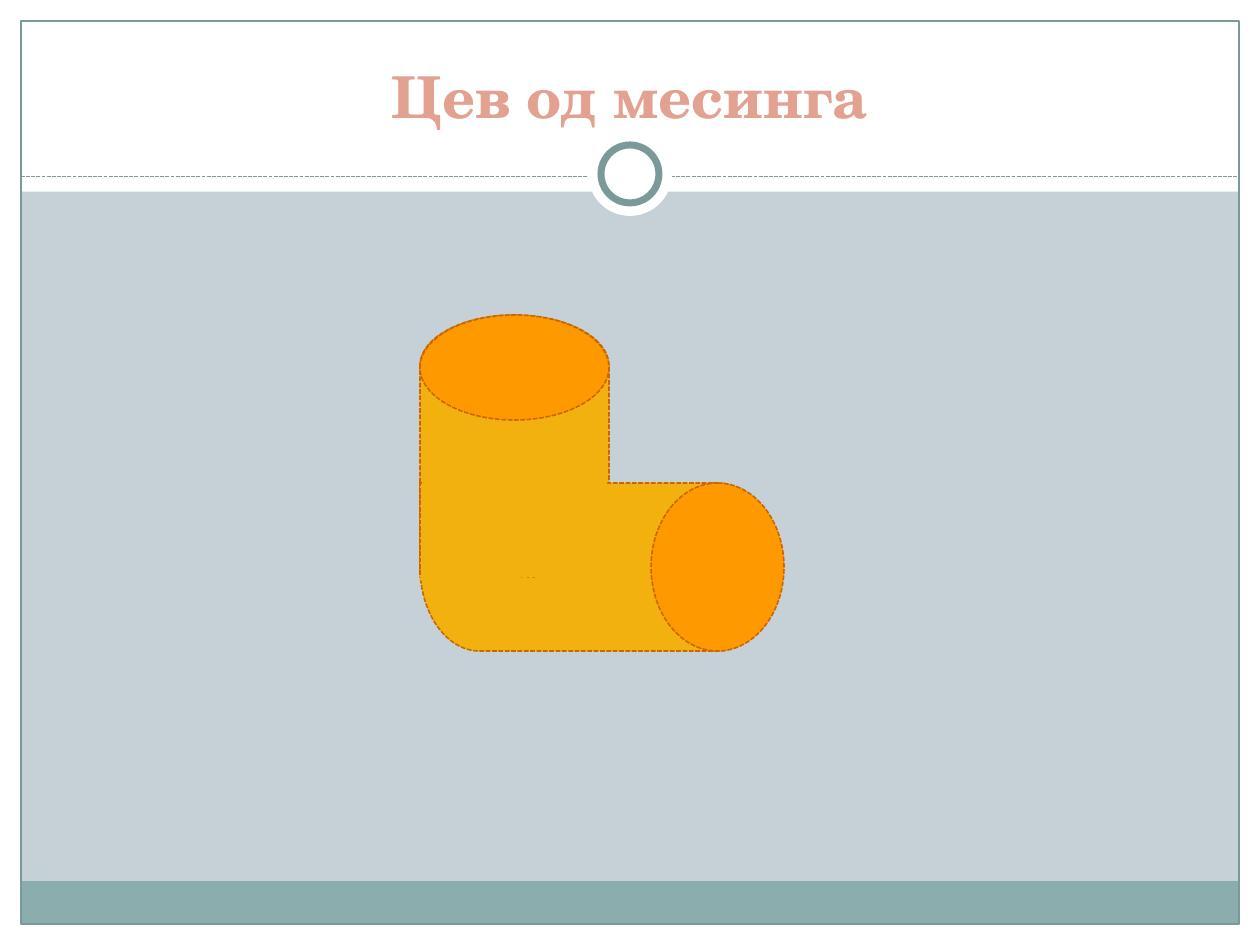
"""Build the slide with an elbow of brass tube under a framed title."""
from lxml import etree
from pptx import Presentation
from pptx.dml.color import RGBColor
from pptx.enum.dml import MSO_LINE
from pptx.enum.shapes import MSO_CONNECTOR, MSO_SHAPE
from pptx.enum.text import MSO_ANCHOR, MSO_AUTO_SIZE, PP_ALIGN
from pptx.oxml.ns import qn
from pptx.util import Pt

RECT = MSO_SHAPE.RECTANGLE
OVAL = MSO_SHAPE.OVAL
DISK = MSO_SHAPE.FLOWCHART_MAGNETIC_DISK
DRUM = MSO_SHAPE.FLOWCHART_DIRECT_ACCESS_STORAGE
DASH = MSO_LINE.SQUARE_DOT

WHITE = RGBColor(0xFF, 0xFF, 0xFF)
MIST = RGBColor(0xC5, 0xD1, 0xD7)
TEAL = RGBColor(0x8C, 0xAD, 0xAE)
DARK_TEAL = RGBColor(0x7C, 0x99, 0x9A)
SALMON = RGBColor(0xE3, 0xA1, 0x92)
BRASS = RGBColor(0xF2, 0xB1, 0x0E)
ORANGE = RGBColor(0xFF, 0x99, 0x00)
COPPER = RGBColor(0xCC, 0x66, 0x00)

WIDTH, HEIGHT, MARGIN = 720, 540, 12
HEADER_HEIGHT = 109.5
DIVIDER_Y = 100.8


def style_line(line, color, weight, dash=None):
    line.color.rgb = color
    line.width = Pt(weight)
    if dash is not None:
        line.dash_style = dash


def add_part(kind, box, fill=None, outline=None, rotation=0):
    part = shapes.add_shape(kind, *[Pt(value) for value in box])
    part.shadow.inherit = False
    part.rotation = rotation
    if fill is None:
        part.fill.background()
    else:
        part.fill.solid()
        part.fill.fore_color.rgb = fill
    if outline is None:
        part.line.fill.background()
    else:
        style_line(part.line, *outline)


presentation = Presentation()
presentation.slide_width = Pt(WIDTH)
presentation.slide_height = Pt(HEIGHT)
slide = presentation.slides.add_slide(presentation.slide_layouts[5])
shapes = slide.shapes
slide.background.fill.solid()
slide.background.fill.fore_color.rgb = MIST

borders = [
    (0, HEIGHT - MARGIN, WIDTH, MARGIN),
    (0, 0, WIDTH, HEADER_HEIGHT),
    (0, 0, MARGIN, HEIGHT),
    (WIDTH - MARGIN, 0, MARGIN, HEIGHT),
]
for border in borders:
    add_part(RECT, border, WHITE)

inner_width = WIDTH - 2 * MARGIN
add_part(RECT, (MARGIN, 503.5, inner_width, 24.5), TEAL)
add_part(RECT, (MARGIN, MARGIN, inner_width, HEIGHT - 2 * MARGIN),
         outline=(DARK_TEAL, 0.75))

divider = shapes.add_connector(
    MSO_CONNECTOR.STRAIGHT,
    Pt(MARGIN), Pt(DIVIDER_Y), Pt(WIDTH - MARGIN), Pt(DIVIDER_Y))
style_line(divider.line, DARK_TEAL, 0.75, DASH)
etree.SubElement(divider.element.spPr, qn("a:effectLst"))

for diameter, outline in [(48, None), (33.1, (DARK_TEAL, 4))]:
    corner = (WIDTH / 2 - diameter / 2, 99.4 - diameter / 2)
    add_part(OVAL, (*corner, diameter, diameter), WHITE, outline)

title = shapes.title
shapes.element.append(title.element)
title_box = {"left": Pt(24), "top": Pt(18), "width": Pt(672), "height": Pt(60)}
for name, value in title_box.items():
    setattr(title, name, value)
frame_format = {"text": "Цев од месинга", "word_wrap": True,
                "auto_size": MSO_AUTO_SIZE.NONE,
                "vertical_anchor": MSO_ANCHOR.BOTTOM}
for name, value in frame_format.items():
    setattr(title.text_frame, name, value)
heading = title.text_frame.paragraphs[0]
heading.alignment = PP_ALIGN.CENTER
heading_font = heading.runs[0].font
for name, value in {"name": "TeX Gyre Schola", "size": Pt(33), "bold": True}.items():
    setattr(heading_font, name, value)
heading_font.color.rgb = SALMON

tube_parts = [
    (DISK, (240, 180, 108, 174), BRASS, COPPER, 0),
    (DRUM, (240, 276, 204, 96), BRASS, COPPER, 0),
    (OVAL, (246, 240, 96, 126), BRASS, BRASS, 335.2),
    (RECT, (312, 270, 30, 36), BRASS, BRASS, 17.8),
    (RECT, (247, 292.5, 39, 48), BRASS, BRASS, 90),
    (RECT, (246, 270, 54, 66), BRASS, COPPER, 270),
    (RECT, (246, 258, 60, 36), BRASS, BRASS, 28.6),
    (RECT, (243.5, 319.5, 60, 30), BRASS, BRASS, 32.4),
    (RECT, (288, 258, 48, 72), BRASS, BRASS, 0),
    (OVAL, (240, 180, 108, 60), ORANGE, COPPER, 0),
    (OVAL, (362, 286, 96, 76), ORANGE, COPPER, 90),
]
for kind, box, fill, edge, rotation in tube_parts:
    add_part(kind, box, fill, (edge, 0.9, DASH), rotation)

presentation.save("out.pptx")
